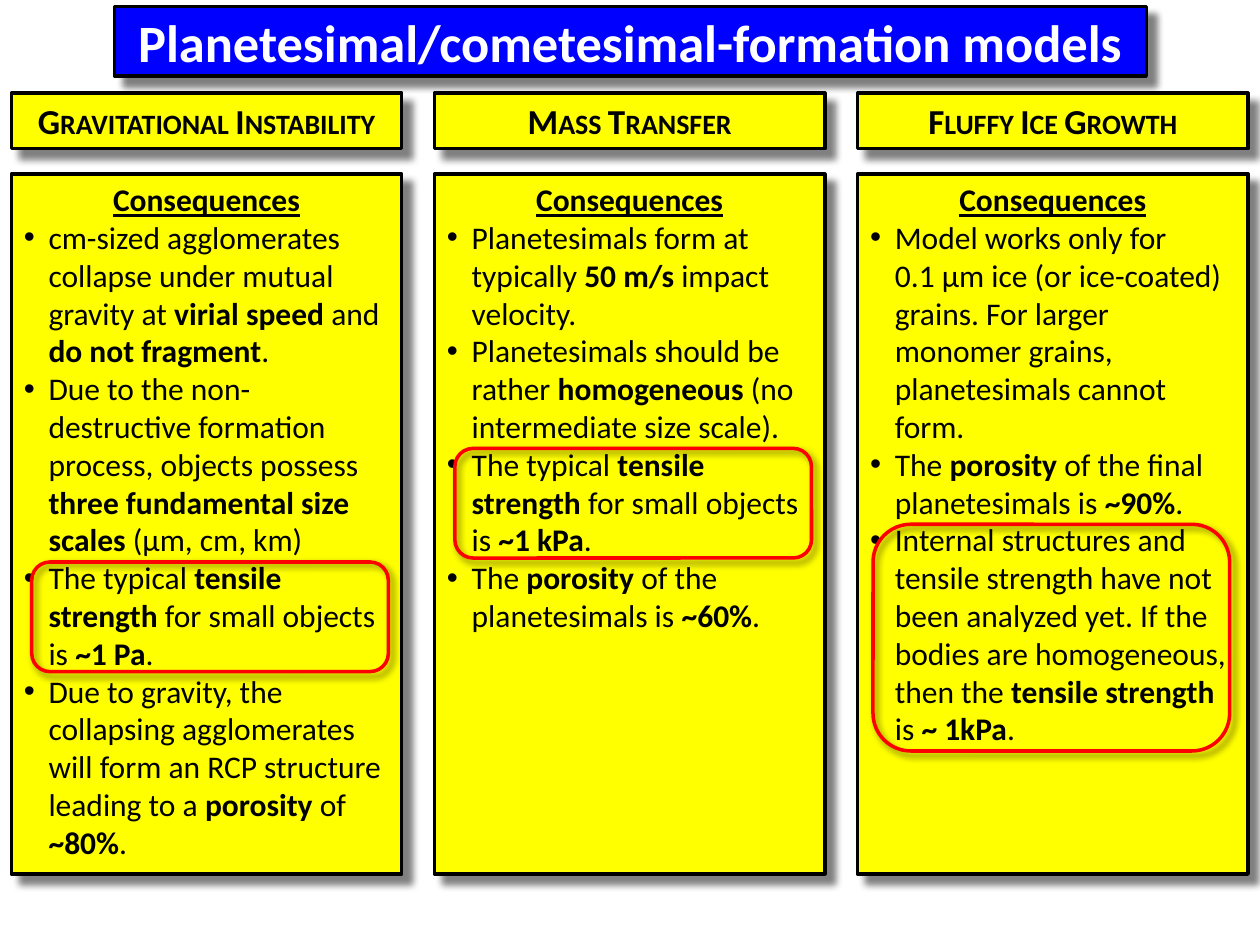
import pptx
import pptx.dml.color
import pptx.enum.shapes
import pptx.enum.text
import pptx.oxml
import pptx.oxml.ns
import pptx.util
from pptx.util import Cm, Pt

COLORS = {"panel": "FFFF00", "title": "0000FF", "ink": "000000",
          "light": "FFFFFF", "mark": "FF0000"}
FONT = "Calibri"
COLUMN_LEFT, COLUMN_PITCH, COLUMN_WIDTH = 0.23, 8.53, 7.87
HEADER_TOP, HEADER_HEIGHT = 1.88, 1.12
BODY_TOP, BODY_HEIGHT = 3.51, 14.11
MARK_WIDTH = 7.19

MODELS = [
    {"name": "Gravitational Instability",
     "points": [
         "cm-sized agglomerates collapse under mutual gravity at **virial speed **and** do not fragment**.",
         "Due to the non-destructive formation process, objects possess "
         "**three fundamental size scales **(µm, cm, km)",
         "The typical **tensile strength** for small objects is **~1 Pa**.",
         "Due to gravity, the collapsing agglomerates will form an RCP structure "
         "leading to a **porosity** of **~80%**."],
     "mark": (0.64, 11.33, 2.21)},
    {"name": "Mass Transfer",
     "points": [
         "Planetesimals form at typically **50 m/s **impact velocity.",
         "Planetesimals should be rather **homogeneous **(no intermediate size scale).",
         "The typical **tensile strength** for small objects is **~1 kPa**.",
         "The **porosity** of the planetesimals is **~60%**."],
     "mark": (9.17, 9.04, 2.21)},
    {"name": "Fluffy Ice Growth",
     "points": [
         "Model works only for \n0.1 µm ice (or ice-coated) grains. For larger monomer grains, "
         "planetesimals cannot form.",
         "The **porosity** of the final planetesimals is **~90%**.",
         "Internal structures and tensile strength have not been analyzed yet. If the bodies are "
         "homogeneous, then the **tensile strength **is **~ 1kPa**."],
     "mark": (17.6, 10.57, 4.57)},
]


def rgb(name):
    return pptx.dml.color.RGBColor.from_string(COLORS[name])


def add_shadow(shape, distance):
    shape.shadow.inherit = False
    effects = shape._element.spPr.find(pptx.oxml.ns.qn("a:effectLst"))
    effects.append(pptx.oxml.parse_xml(
        f'<a:outerShdw {pptx.oxml.ns.nsdecls("a")} blurRad="{Pt(4)}" dist="{Pt(distance)}" '
        f'dir="2700000" algn="tl" rotWithShape="0"><a:srgbClr val="{COLORS["ink"]}">'
        '<a:alpha val="50000"/></a:srgbClr></a:outerShdw>'))


def add_box(page, left, top, width, height, fill, line="ink", kind="RECTANGLE", distance=7):
    box = page.shapes.add_shape(pptx.enum.shapes.MSO_SHAPE[kind],
                                Cm(left), Cm(top), Cm(width), Cm(height))
    if fill:
        box.fill.solid()
        box.fill.fore_color.rgb = rgb(fill)
    else:
        box.fill.background()
    box.line.color.rgb = rgb(line)
    box.line.width = Pt(2)
    add_shadow(box, distance)
    box.text_frame.word_wrap = True
    box.text_frame.vertical_anchor = pptx.enum.text.MSO_ANCHOR.TOP
    return box


def style_paragraph(para, size, color="ink", bold=None, align="LEFT"):
    para.alignment = pptx.enum.text.PP_ALIGN[align]
    para.font.name = FONT
    para.font.size = Pt(size)
    para.font.color.rgb = rgb(color)
    para.font.bold = bold


def add_heading(box, text, size, color="ink"):
    para = box.text_frame.paragraphs[0]
    style_paragraph(para, size, color, True, "CENTER")
    span = para.add_run()
    span.text = text
    return span


def add_bullet(box, text):
    para = box.text_frame.add_paragraph()
    style_paragraph(para, 18)
    properties = para._p.get_or_add_pPr()
    properties.set("marL", str(Cm(0.5)))
    properties.set("indent", str(Cm(-0.5)))
    for tag, name, value in (("buFont", "typeface", "Arial"), ("buChar", "char", "•")):
        bullet = pptx.oxml.parse_xml(
            f'<a:{tag} {pptx.oxml.ns.nsdecls("a")} {name}="{value}"/>')
        properties.insert_element_before(bullet, "a:tabLst", "a:defRPr", "a:extLst")
    for index, part in enumerate(text.split("**")):
        for row, words in enumerate(part.split("\n")):
            if row:
                para.add_line_break()
            span = para.add_run()
            span.text = words
            span.font.bold = index % 2 == 1


def add_body(page, left, points):
    box = add_box(page, left, BODY_TOP, COLUMN_WIDTH, BODY_HEIGHT, "panel")
    add_heading(box, "Consequences", 18).font.underline = True
    for point in points:
        add_bullet(box, point)


def add_header(page, left, name):
    box = add_box(page, left, HEADER_TOP, COLUMN_WIDTH, HEADER_HEIGHT, "panel")
    span = add_heading(box, name, 20)
    span._r.get_or_add_rPr().set("cap", "small")


def add_title(page, text):
    box = add_box(page, 2.31, 0.13, 20.8, 1.4, "title")
    box.text_frame.vertical_anchor = pptx.enum.text.MSO_ANCHOR.MIDDLE
    add_heading(box, text, 30, "light")


def add_mark(page, left, top, height):
    add_box(page, left, top, MARK_WIDTH, height, None, "mark", "ROUNDED_RECTANGLE", 3)


def main():
    deck = pptx.Presentation()
    deck.slide_width, deck.slide_height = Cm(25.4), Cm(19.05)
    page = deck.slides.add_slide(deck.slide_layouts[6])
    for index, model in enumerate(MODELS):
        left = COLUMN_LEFT + index * COLUMN_PITCH
        add_body(page, left, model["points"])
        add_header(page, left, model["name"])
    add_title(page, "Planetesimal/cometesimal-formation models")
    for model in MODELS:
        add_mark(page, *model["mark"])
    deck.save("out.pptx")


if __name__ == "__main__":
    main()
